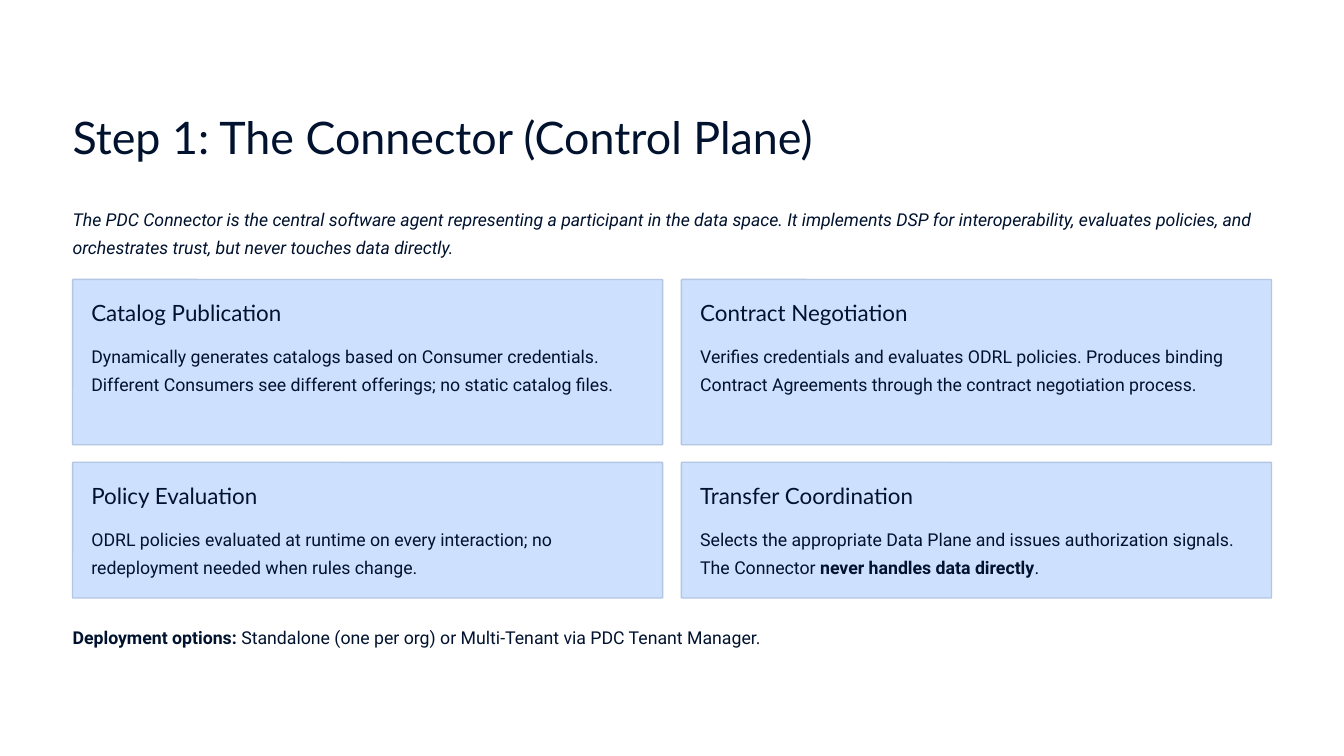
from pptx import Presentation
from pptx.dml.color import RGBColor
from pptx.enum.shapes import MSO_SHAPE
from pptx.util import Inches, Pt

ROUND = MSO_SHAPE.ROUNDED_RECTANGLE

TITLE = "Step 1: The Connector (Control Plane)"
INTRO = (
    "The PDC Connector is the central software agent representing a participant "
    "in the data space. It implements DSP for interoperability, evaluates policies, "
    "and orchestrates trust, but never touches data directly."
)
CARDS = [
    [
        ("Catalog Publication", [
            ("Dynamically generates catalogs based on Consumer credentials. Different "
             "Consumers see different offerings; no static catalog files.", False)]),
        ("Contract Negotiation", [
            ("Verifies credentials and evaluates ODRL policies. Produces binding Contract "
             "Agreements through the contract negotiation process.", False)]),
    ],
    [
        ("Policy Evaluation", [
            ("ODRL policies evaluated at runtime on every interaction; no redeployment "
             "needed when rules change.", False)]),
        ("Transfer Coordination", [
            ("Selects the appropriate Data Plane and issues authorization signals. "
             "The Connector ", False),
            ("never handles data directly", True),
            (".", False)]),
    ],
]
FOOTER = [
    ("Deployment options:", True),
    (" Standalone (one per org) or Multi-Tenant via PDC Tenant Manager.", False),
]

THEME = {
    "page": RGBColor.from_string("FFFFFF"),
    "ink": RGBColor.from_string("01122E"),
    "card": RGBColor.from_string("CDE0FE"),
    "edge": RGBColor.from_string("B3C6E4"),
    "title": {"font": "Lato", "size": 24, "lead": 1.04},
    "head": {"font": "Lato", "size": 12, "lead": 1.04},
    "body": {"font": "Roboto", "size": 9.5, "lead": 1.33},
}

WIDE = Inches(10)
LEFT, TOP = 0.54, 2.08
CARD_W, PAD = 4.39, 0.14
COL_GAP, ROW_GAP = 0.14, 0.13
ROW_H = [1.23, 1.01]
BODY_H = [0.65, 0.43]


def add_text(slide, box, runs, font, size, lead, italic=False):
    frame = slide.shapes.add_textbox(*map(Inches, box)).text_frame
    frame.word_wrap = True
    frame.margin_left = frame.margin_right = 0
    frame.margin_top = frame.margin_bottom = 0
    para = frame.paragraphs[0]
    para.line_spacing = lead
    for text, bold in runs:
        run = para.add_run()
        run.text = text
        run.font.name = font
        run.font.size = Pt(size)
        run.font.bold = bold
        run.font.italic = italic
        run.font.color.rgb = THEME["ink"]


def add_card(slide, left, top, high, body_h, head, body):
    card = slide.shapes.add_shape(
        ROUND, Inches(left), Inches(top), Inches(CARD_W), Inches(high))
    card.adjustments[0] = 0.01 / 2
    card.shadow.inherit = False
    card.fill.solid()
    card.fill.fore_color.rgb = THEME["card"]
    card.line.color.rgb = THEME["edge"]
    card.line.width = Pt(0.75)
    inner = left + PAD
    add_text(slide, (inner, top + PAD, 1.74, 0.21), [(head, False)], **THEME["head"])
    add_text(slide, (inner, top + 0.44, CARD_W - 2 * PAD, body_h), body, **THEME["body"])


def main():
    deck = Presentation()
    deck.slide_width, deck.slide_height = WIDE, WIDE * 9 // 16
    slide = deck.slides.add_slide(deck.slide_layouts[6])
    slide.background.fill.solid()
    slide.background.fill.fore_color.rgb = THEME["page"]

    add_text(slide, (LEFT, 0.8, 6.36, 0.42), [(TITLE, False)], **THEME["title"])
    add_text(slide, (LEFT, 1.5, 8.91, 0.43), [(INTRO, False)], italic=True, **THEME["body"])

    top = TOP
    for row, high, body_h in zip(CARDS, ROW_H, BODY_H):
        for col, (head, body) in enumerate(row):
            left = LEFT + col * (CARD_W + COL_GAP)
            add_card(slide, left, top, high, body_h, head, body)
        top += high + ROW_GAP

    add_text(slide, (LEFT, 4.61, 9.41, 0.22), FOOTER, **THEME["body"])
    deck.save("out.pptx")


if __name__ == "__main__":
    main()
